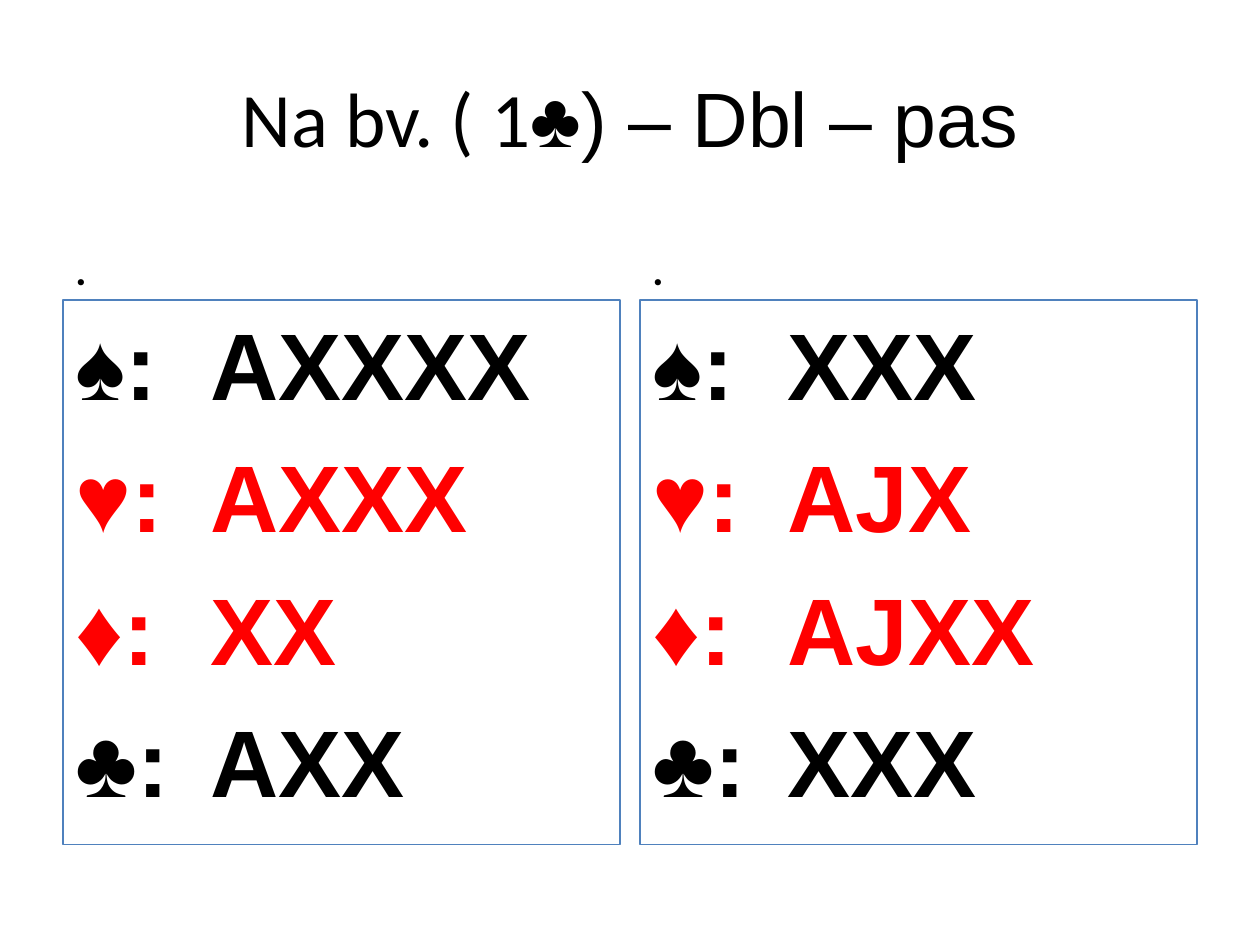
import pptx
import pptx.dml.color
import pptx.enum.shapes
import pptx.enum.text
import pptx.util
from lxml import etree

BLACK = pptx.dml.color.RGBColor(0x00, 0x00, 0x00)
RED = pptx.dml.color.RGBColor(0xFF, 0x00, 0x00)
BLUE = pptx.dml.color.RGBColor(0x4F, 0x81, 0xBD)

# Two equal columns between the side margins
SLIDE_WIDTH, SLIDE_HEIGHT = 10, 7.5
MARGIN, GUTTER = 0.5, 0.16
CONTENT_WIDTH = SLIDE_WIDTH - 2 * MARGIN
COLUMN_WIDTH = (CONTENT_WIDTH - GUTTER) / 2
HEADING_TOP, HEADING_HEIGHT = 1.68, 0.7
HAND_TOP, HAND_HEIGHT = HEADING_TOP + HEADING_HEIGHT, 4.32
CARD_INDENT = 1.07

SUITS = [("♠", BLACK), ("♥", RED), ("♦", RED), ("♣", BLACK)]
HANDS = [
    ["AXXXX", "AXXX", "XX", "AXX"],
    ["XXX", "AJX", "AJXX", "XXX"],
]


def add_span(para, text, size, font, color=BLACK, bold=False):
    span = para.add_run()
    span.text = text
    span.font.size = pptx.util.Pt(size)
    span.font.name = font
    span.font.bold = bold
    span.font.color.rgb = color


def add_text_box(page, left, top, width, height, anchor):
    box = page.shapes.add_textbox(*map(pptx.util.Inches, (left, top, width, height)))
    box.text_frame.word_wrap = True
    box.text_frame.vertical_anchor = anchor
    return box.text_frame.paragraphs[0]


def add_tab_stop(para, position):
    properties = para._p.get_or_add_pPr()
    namespace = "{http://schemas.openxmlformats.org/drawingml/2006/main}"
    stops = etree.SubElement(properties, namespace + "tabLst")
    etree.SubElement(stops, namespace + "tab",
                     pos=str(int(pptx.util.Inches(position))), algn="l")


def add_title(page):
    para = add_text_box(page, MARGIN, 0.3, CONTENT_WIDTH, 1.25,
                        pptx.enum.text.MSO_ANCHOR.MIDDLE)
    para.alignment = pptx.enum.text.PP_ALIGN.CENTER
    add_span(para, "Na bv. ( 1", 44, "Calibri")
    add_span(para, "♣) – Dbl – pas", 44, "Arial")


def add_heading(page, left):
    para = add_text_box(page, left, HEADING_TOP, COLUMN_WIDTH, HEADING_HEIGHT,
                        pptx.enum.text.MSO_ANCHOR.BOTTOM)
    add_span(para, ".", 24, "Calibri", bold=True)


def add_hand(page, left, hand):
    box = page.shapes.add_shape(
        pptx.enum.shapes.MSO_SHAPE.RECTANGLE,
        *map(pptx.util.Inches, (left, HAND_TOP, COLUMN_WIDTH, HAND_HEIGHT)))
    box.shadow.inherit = False
    box.fill.background()
    box.line.color.rgb = BLUE
    box.line.width = pptx.util.Pt(0.75)
    frame = box.text_frame
    frame.word_wrap = True
    frame.vertical_anchor = pptx.enum.text.MSO_ANCHOR.TOP
    for row, ((suit, color), cards) in enumerate(zip(SUITS, hand)):
        para = frame.add_paragraph() if row else frame.paragraphs[0]
        para.alignment = pptx.enum.text.PP_ALIGN.LEFT
        if row:
            para.space_before = pptx.util.Pt(10.8)
        add_tab_stop(para, CARD_INDENT)
        add_span(para, f"{suit}:\t{cards}", 54, "Arial", color, bold=True)


def main():
    deck = pptx.Presentation()
    deck.slide_width = pptx.util.Inches(SLIDE_WIDTH)
    deck.slide_height = pptx.util.Inches(SLIDE_HEIGHT)
    page = deck.slides.add_slide(deck.slide_layouts[6])

    add_title(page)
    # One heading and one hand of cards per column
    for column, hand in enumerate(HANDS):
        left = MARGIN + column * (COLUMN_WIDTH + GUTTER)
        add_heading(page, left)
        add_hand(page, left, hand)

    deck.save("out.pptx")


if __name__ == "__main__":
    main()
